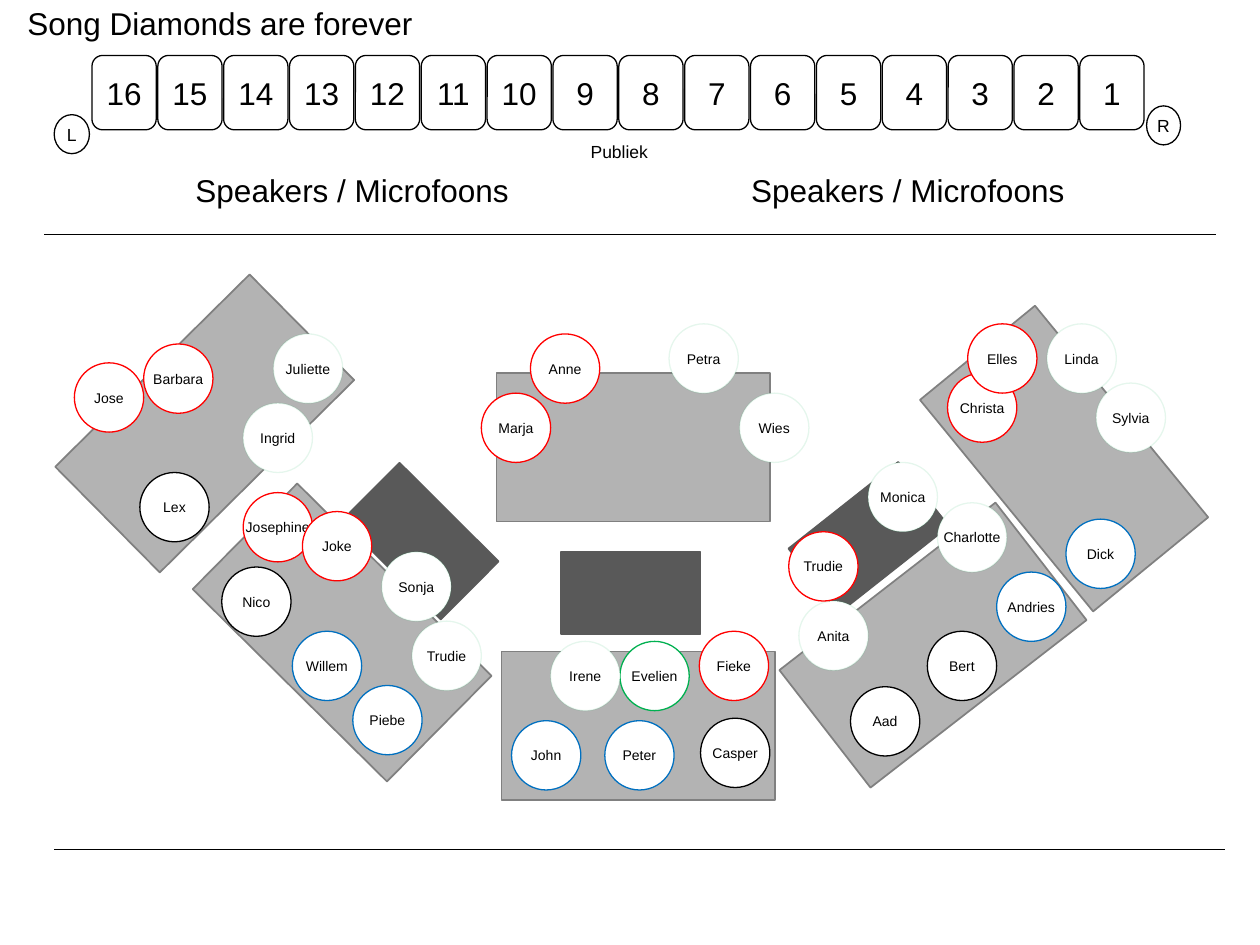
from lxml.etree import SubElement
from pptx import Presentation
from pptx.dml.color import RGBColor
from pptx.enum.shapes import MSO_CONNECTOR, MSO_SHAPE as SHAPE
from pptx.enum.text import MSO_ANCHOR as ANCHOR, MSO_AUTO_SIZE as AUTO_SIZE, PP_ALIGN as ALIGN
from pptx.oxml.ns import qn
from pptx.util import Inches, Pt

BLACK = RGBColor(0x00, 0x00, 0x00)
WHITE = RGBColor(0xFF, 0xFF, 0xFF)
RED = RGBColor(0xFF, 0x00, 0x00)
GREEN = RGBColor(0x00, 0xB0, 0x50)
BLUE = RGBColor(0x00, 0x70, 0xC0)
RISER_GREY = RGBColor(0xB3, 0xB3, 0xB3)
RISER_EDGE = RGBColor(0x80, 0x80, 0x80)
PODIUM_GREY = RGBColor(0x59, 0x59, 0x59)

SINGER_SIZE = 0.55
RISER_SIZE = (2.17, 1.18)
PODIUM_SIZE = (1.11, 0.65)
FAINT = "10000"  # opacity in thousandths of a percent

# left, top, rotation
PODIUMS = [(2.78, 3.97, 44.9), (6.34, 3.94, 321.7), (4.45, 4.38, 0)]

# Riser left, top, rotation; singers with their offset from the riser's corner
RISERS = [
    (0.54, 2.77, 315.3, [
        ("Juliette", 1.63, -0.12, GREEN), ("Barbara", 0.6, -0.04, RED),
        ("Ingrid", 1.39, 0.43, GREEN), ("Lex", 0.57, 0.98, BLACK),
        ("Jose", 0.05, 0.11, RED)]),
    (1.63, 4.43, 44.7, [
        ("Piebe", 1.17, 1.01, BLUE), ("Josephine", 0.3, -0.52, RED),
        ("Trudie", 1.64, 0.5, GREEN), ("Joke", 0.77, -0.37, RED),
        ("Nico", 0.13, 0.07, BLACK), ("Sonja", 1.4, -0.05, GREEN),
        ("Willem", 0.69, 0.58, BLUE)]),
    (3.94, 2.96, 0, [
        ("Anne", 0.27, -0.31, RED), ("Petra", 1.37, -0.39, GREEN),
        ("Marja", -0.12, 0.16, RED), ("Wies", 1.93, 0.16, GREEN)]),
    (3.98, 5.17, 0, [
        ("Evelien", 0.94, -0.08, GREEN), ("Peter", 0.82, 0.55, BLUE),
        ("John", 0.08, 0.55, BLUE), ("Fieke", 1.57, -0.16, RED),
        ("Irene", 0.39, -0.08, GREEN), ("Casper", 1.58, 0.53, BLACK)]),
    (7.36, 3.05, 50.7, [
        ("Dick", 1.1, 1.07, BLUE), ("Linda", 0.95, -0.48, GREEN),
        ("Christa", 0.16, -0.09, RED), ("Elles", 0.32, -0.48, RED),
        ("Sylvia", 1.34, -0.01, GREEN)]),
    (6.32, 4.53, 322.2, [
        ("Andries", 1.59, 0.01, BLUE), ("Anita", 0.02, 0.24, RED),
        ("Monica", 0.57, -0.86, GREEN), ("Bert", 1.04, 0.48, BLACK),
        ("Trudie", -0.06, -0.31, RED), ("Aad", 0.43, 0.92, BLACK),
        ("Charlotte", 1.12, -0.54, GREEN)]),
]
# Singers whose outline barely shows
FAINT_SINGERS = {"Juliette", "Ingrid", "Sonja", "Petra", "Wies", "Irene",
                 "Linda", "Sylvia", "Monica", "Charlotte", "Anita"}
FAINT_GREEN_TRUDIE = ("Trudie", GREEN)


def write(frame, text, size=18, align=ALIGN.CENTER, anchor=ANCHOR.MIDDLE, wrap=False):
    frame.word_wrap = wrap
    frame.vertical_anchor = anchor
    paragraph = frame.paragraphs[0]
    paragraph.alignment = align
    run = paragraph.add_run()
    run.text = text
    run.font.size = Pt(size)
    run.font.name = "Arial"
    run.font.color.rgb = BLACK


def add_label(slide, box, text, **text_format):
    label = slide.shapes.add_textbox(*map(Inches, box))
    write(label.text_frame, text, anchor=ANCHOR.TOP, wrap=True, **text_format)
    label.text_frame.auto_size = AUTO_SIZE.SHAPE_TO_FIT_TEXT


def add_block(slide, kind, box, fill=None, edge=BLACK, edge_width=0.75, rotation=0):
    block = slide.shapes.add_shape(kind, *map(Inches, box))
    block.shadow.inherit = False
    block.rotation = rotation
    if fill is None:
        block.fill.background()
    else:
        block.fill.solid()
        block.fill.fore_color.rgb = fill
    block.line.color.rgb = edge
    block.line.width = Pt(edge_width)
    return block


def add_divider(slide, left, right, y):
    divider = slide.shapes.add_connector(
        MSO_CONNECTOR.STRAIGHT, Inches(left), Inches(y), Inches(right), Inches(y))
    divider.line.color.rgb = BLACK
    divider.line.width = Pt(0.75)
    SubElement(divider._element.spPr, qn("a:effectLst"))


def add_places(slide, left, top, width, count=16):
    """Row of numbered places, counting down from left to right."""
    place_width, place_height = 0.51, 0.59
    pitch = (width - place_width) / (count - 1)
    for index in range(count):
        box = (left + index * pitch, top, place_width, place_height)
        place = add_block(slide, SHAPE.ROUNDED_RECTANGLE, box)
        write(place.text_frame, str(count - index))


def add_side_mark(slide, box, letter):
    mark = add_block(slide, SHAPE.OVAL, box, fill=WHITE)
    write(mark.text_frame, letter, size=10)


def add_singer(slide, left, top, name, group_color):
    box = (left, top, SINGER_SIZE, SINGER_SIZE)
    singer = add_block(slide, SHAPE.OVAL, box, fill=WHITE, edge=group_color)
    write(singer.text_frame, name, size=8)
    if name in FAINT_SINGERS and group_color == GREEN or (name, group_color) == FAINT_GREEN_TRUDIE:
        color = singer.line._ln.find(".//" + qn("a:srgbClr"))
        SubElement(color, qn("a:alpha"), val=FAINT)


def add_riser(slide, left, top, rotation, singers):
    add_block(slide, SHAPE.RECTANGLE, (left, top, *RISER_SIZE), fill=RISER_GREY,
              edge=RISER_EDGE, edge_width=1, rotation=rotation)
    for name, dx, dy, group_color in singers:
        # Anita stands among the green group's faint outlines
        color = GREEN if name == "Anita" else group_color
        add_singer(slide, left + dx, top + dy, name, color)


def add_stage(slide):
    for left, top, rotation in PODIUMS:
        add_block(slide, SHAPE.RECTANGLE, (left, top, *PODIUM_SIZE), fill=PODIUM_GREY,
                  edge=PODIUM_GREY, edge_width=1, rotation=rotation)
    for riser in RISERS:
        add_riser(slide, *riser)


def add_front(slide):
    add_label(slide, (0.12, -0.02, 3.7, 0.4), "Song Diamonds are forever", align=ALIGN.LEFT)
    add_places(slide, left=0.73, top=0.44, width=8.35)
    add_side_mark(slide, (0.43, 0.91, 0.28, 0.31), "L")
    add_side_mark(slide, (9.1, 0.84, 0.27, 0.31), "R")
    add_label(slide, (4.13, 1.07, 1.57, 0.27), "Publiek", size=10)
    for left in (1.22, 5.63):
        add_label(slide, (left, 1.31, 3.15, 0.4), "Speakers / Microfoons")


def main():
    deck = Presentation()
    deck.slide_width, deck.slide_height = Inches(10), Inches(7.5)
    slide = deck.slides.add_slide(deck.slide_layouts[6])
    add_front(slide)
    add_divider(slide, 0.35, 9.65, 1.86)
    add_stage(slide)
    add_divider(slide, 0.43, 9.72, 6.74)
    deck.save("out.pptx")


if __name__ == "__main__":
    main()
